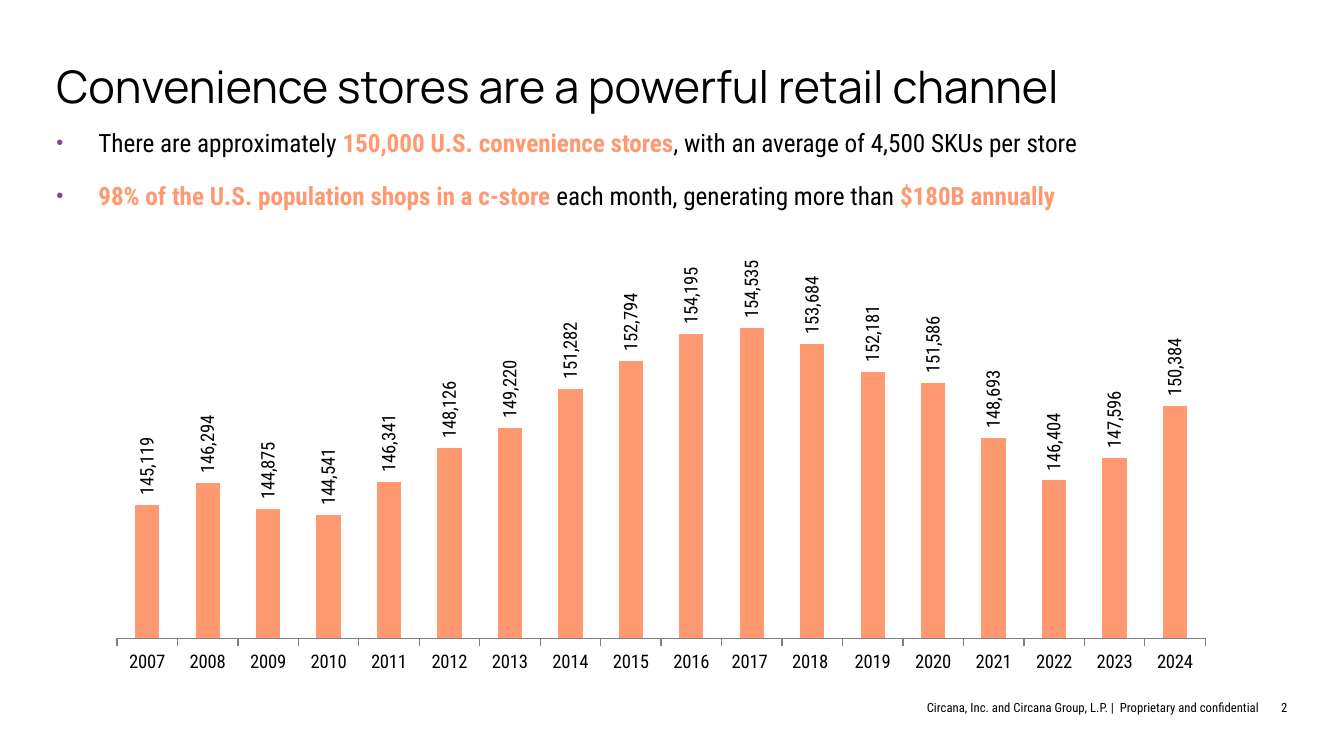
from dataclasses import dataclass

from lxml.etree import SubElement
from pptx import Presentation
from pptx.chart.data import CategoryChartData
from pptx.dml.color import RGBColor
from pptx.enum.chart import XL_CHART_TYPE as ChartType
from pptx.enum.chart import XL_LABEL_POSITION as LabelPosition
from pptx.enum.chart import XL_TICK_MARK as TickMark
from pptx.enum.text import MSO_ANCHOR as Anchor
from pptx.enum.text import PP_ALIGN as Align
from pptx.oxml import parse_xml
from pptx.oxml.ns import nsdecls, qn
from pptx.util import Pt


@dataclass(frozen=True)
class Theme:
    heading_font: str = "Manrope"
    body_font: str = "Roboto Condensed"
    ink: str = "000000"
    accent: str = "FF9971"
    bullet: str = "7A4C93"
    axis: str = "808080"
    title_size: float = 24
    body_size: float = 13.5
    chart_size: float = 10
    footer_size: float = 6.8


THEME = Theme()
NUMBER_FORMAT = '_(* #,##0_);_(* \\(#,##0\\);_(* "-"??_);_('

# Each bullet is a list of (text, highlighted) spans.
BULLETS = [
    [
        ("There are approximately ", False),
        ("150,000 U.S. convenience stores", True),
        (", with an average of 4,500 SKUs per store", False),
    ],
    [
        ("98% of the U.S. population shops in a c-store ", True),
        ("each month, generating more than ", False),
        ("$180B annually", True),
    ],
]

STORE_COUNTS = {
    "2007": 145119, "2008": 146294, "2009": 144875, "2010": 144541,
    "2011": 146341, "2012": 148126, "2013": 149220, "2014": 151282,
    "2015": 152794, "2016": 154195, "2017 ": 154535, "2018 ": 153684,
    "2019": 152181, "2020": 151586, "2021": 148693, "2022": 146404,
    "2023": 147596, "2024": 150384,
}


def style_font(font, name, size, color=THEME.ink, bold=False):
    font.name = name
    font.size = Pt(size)
    font.bold = bold
    font.color.rgb = RGBColor.from_string(color)


def add_frame(page, left, top, width, height, anchor=Anchor.TOP):
    """Add a text box without margins and return its text frame."""
    box = page.shapes.add_textbox(Pt(left), Pt(top), Pt(width), Pt(height))
    frame = box.text_frame
    frame.word_wrap = True
    frame.vertical_anchor = anchor
    frame.margin_left = frame.margin_right = Pt(0)
    frame.margin_top = frame.margin_bottom = Pt(0)
    return frame


def add_line(page, text, bounds, font_name, size, align=Align.LEFT, anchor=Anchor.TOP):
    """Add a text box holding one line in one style."""
    frame = add_frame(page, *bounds, anchor=anchor)
    frame.text = text
    para = frame.paragraphs[0]
    para.alignment = align
    para.line_spacing = 0.9
    style_font(para.runs[0].font, font_name, size)


def set_bullet(para, indent):
    props = para._p.get_or_add_pPr()
    props.set("marL", str(Pt(indent)))
    props.set("indent", str(-Pt(indent)))
    color = SubElement(props, qn("a:buClr"))
    SubElement(color, qn("a:srgbClr"), val=THEME.bullet)
    SubElement(props, qn("a:buSzPct"), val="80000")
    SubElement(props, qn("a:buFont"), typeface="Arial")
    SubElement(props, qn("a:buChar"), char="•")


def add_bullets(page, bullets, bounds):
    frame = add_frame(page, *bounds)
    for index, spans in enumerate(bullets):
        para = frame.add_paragraph() if index else frame.paragraphs[0]
        para.line_spacing = 0.9
        para.space_after = Pt(14)
        set_bullet(para, 22.5)
        for text, highlighted in spans:
            span = para.add_run()
            span.text = text
            color = THEME.accent if highlighted else THEME.ink
            style_font(span.font, THEME.body_font, THEME.body_size, color, highlighted)


def set_plot_layout(chart, x, y, w, h):
    """Fix the inner plot area, in fractions of the chart."""
    area = chart.element.xpath("c:chart/c:plotArea")[0]
    for layout in area.xpath("c:layout"):
        area.remove(layout)
    sizes = "".join(
        f'<c:{tag} val="{value}"/>' for tag, value in zip("xywh", (x, y, w, h))
    )
    area.insert(0, parse_xml(
        f'<c:layout {nsdecls("c")}><c:manualLayout><c:layoutTarget val="inner"/>'
        f'<c:xMode val="edge"/><c:yMode val="edge"/>{sizes}'
        "</c:manualLayout></c:layout>"
    ))


def label_columns(chart):
    """Show the values above the columns, turned to read upwards."""
    plot = chart.plots[0]
    plot.has_data_labels = True
    labels = plot.data_labels
    labels.show_value = True
    labels.position = LabelPosition.OUTSIDE_END
    labels.number_format = NUMBER_FORMAT
    labels.number_format_is_linked = False
    style_font(labels.font, THEME.body_font, THEME.chart_size)
    for body in chart.element.xpath(".//c:dLbls/c:txPr/a:bodyPr"):
        body.set("rot", "-5400000")
        body.set("vert", "horz")


def add_column_chart(page, values, bounds):
    data = CategoryChartData(number_format=NUMBER_FORMAT)
    data.categories = list(values)
    data.add_series("Series 1", list(values.values()))
    frame = page.shapes.add_chart(ChartType.COLUMN_CLUSTERED, *map(Pt, bounds), data)
    chart = frame.chart
    chart.has_legend = False
    chart.has_title = False
    style_font(chart.font, THEME.body_font, THEME.chart_size)

    plot = chart.plots[0]
    plot.gap_width = 150
    plot.vary_by_categories = False
    fill = plot.series[0].format.fill
    fill.solid()
    fill.fore_color.rgb = RGBColor.from_string(THEME.accent)

    years = chart.category_axis
    years.major_tick_mark = TickMark.OUTSIDE
    years.format.line.color.rgb = RGBColor.from_string(THEME.axis)
    years.format.line.width = Pt(0.75)

    counts = chart.value_axis
    counts.minimum_scale, counts.maximum_scale = 138000, 156000
    counts.has_major_gridlines = False
    counts.visible = False

    label_columns(chart)
    set_plot_layout(chart, 0.018, 0.108, 0.964, 0.783)


def main():
    deck = Presentation()
    deck.slide_width, deck.slide_height = Pt(720), Pt(405)
    page = deck.slides.add_slide(deck.slide_layouts[6])

    add_line(page, "Circana, Inc. and Circana Group, L.P. |  Proprietary and confidential",
             (447.8, 372.2, 226.8, 10.8), THEME.body_font, THEME.footer_size,
             Align.RIGHT, Anchor.BOTTOM)
    add_line(page, "2", (681.1, 373, 8.6, 10), THEME.body_font, THEME.footer_size,
             Align.RIGHT, Anchor.BOTTOM)
    add_line(page, "Convenience stores are a powerful retail channel",
             (30.2, 34.6, 661, 32.4), THEME.heading_font, THEME.title_size)
    add_bullets(page, BULLETS, (30.2, 69.8, 661, 27.4))
    add_column_chart(page, STORE_COUNTS, (51.8, 136.1, 604.8, 231.1))

    deck.save("out.pptx")


if __name__ == "__main__":
    main()
